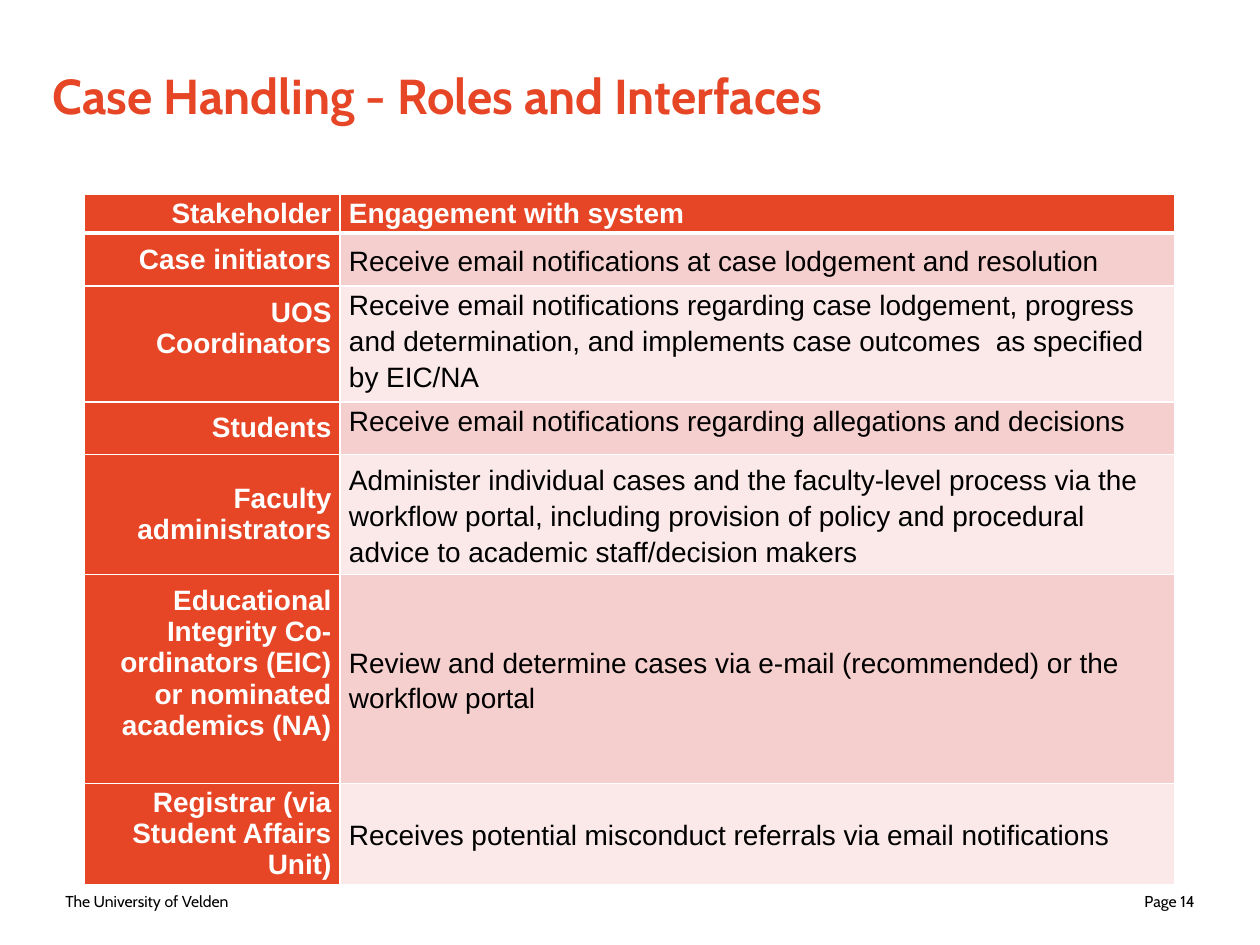
"""Build the slide on case handling roles and interfaces."""
from lxml.etree import SubElement
from pptx import Presentation
from pptx.dml.color import RGBColor
from pptx.enum.text import MSO_ANCHOR as Anchor, PP_ALIGN as Align
from pptx.oxml.ns import qn
from pptx.util import Inches, Pt

WIDTH, HEIGHT = 10, 7.5
ORANGE, WHITE, BLACK = "E64626", "FFFFFF", "000000"
BANDS = ("FAE9E8", "F5CFCD")

TITLE = {"size": Pt(28), "name": "Cabin", "bold": True, "color": ORANGE}
FOOTER = {"size": Pt(9), "name": "Cabin", "bold": False, "color": BLACK}
HEADING = {"size": Pt(16), "name": "Arial", "bold": True, "color": WHITE}
BODY = {**HEADING, "bold": False, "color": BLACK}

TEXTS = [
    ("The University of Velden", (0.42, 6.95, 2.33, 0.4), Align.LEFT, FOOTER),
    ("Page 14", (7.25, 6.95, 2.33, 0.4), Align.RIGHT, FOOTER),
    ("Case Handling - Roles and Interfaces", (0.32, 0.13, 9, 1.25), Align.LEFT, TITLE),
]

TABLE_LEFT, TABLE_TOP = 0.67, 1.54
COLUMNS = (2.03, 6.62)
SIDE_MARGIN, LIFT = 0.07, 0.25
ROWS = [
    (0.31, "Stakeholder", "Engagement with system"),
    (0.42, "Case initiators",
     "Receive email notifications at case lodgement and resolution"),
    (0.92, "UOS Coordinators",
     "Receive email notifications regarding case lodgement, progress and "
     "determination, and implements case outcomes  as specified by EIC/NA"),
    (0.42, "Students",
     "Receive email notifications regarding allegations and decisions"),
    (0.95, "Faculty administrators",
     "Administer individual cases and the faculty-level process via the workflow "
     "portal, including provision of policy and procedural advice to academic "
     "staff/decision makers"),
    (1.66, "Educational Integrity Co-ordinators (EIC) or nominated academics (NA)",
     "Review and determine cases via e-mail (recommended) or the workflow portal"),
    (0.79, "Registrar (via Student Affairs Unit)",
     "Receives potential misconduct referrals via email notifications"),
]
LIFTED_LABELS = {2, 5}
TOP_ANCHORED = {2, 3}


def color(value):
    """Turn a hex string into a colour."""
    return RGBColor.from_string(value)


def write(frame, text, align, style, spacing=None):
    """Fill the first paragraph of a text frame."""
    para = frame.paragraphs[0]
    para.alignment = align
    para.line_spacing = spacing
    span = para.add_run()
    span.text = text
    for key, value in style.items():
        if key == "color":
            span.font.color.rgb = color(value)
        else:
            setattr(span.font, key, value)


def add_text(page, text, place, align, style):
    """Add one wrapped text box, centred vertically."""
    frame = page.shapes.add_textbox(*map(Inches, place)).text_frame
    frame.word_wrap = True
    frame.vertical_anchor = Anchor.MIDDLE
    write(frame, text, align, style)


def add_borders(cell, top, bottom):
    """Draw white borders on the four sides of a cell."""
    for side, points in (("L", 1), ("R", 1), ("T", top), ("B", bottom)):
        line = SubElement(cell._tc.get_or_add_tcPr(), qn(f"a:ln{side}"), w=str(Pt(points)))
        SubElement(SubElement(line, qn("a:solidFill")), qn("a:srgbClr"), val=WHITE)


def format_cell(cell, row, column, text):
    """Style and fill one table cell according to its position."""
    is_label, is_header = column == 0, row == 0
    lifted = is_label and row in LIFTED_LABELS
    at_top = not is_label and row in TOP_ANCHORED
    layout = {
        "margin_left": Inches(SIDE_MARGIN),
        "margin_right": Inches(SIDE_MARGIN),
        "margin_top": 0,
        "margin_bottom": Inches(LIFT if lifted else 0),
        "vertical_anchor": Anchor.TOP if at_top else Anchor.MIDDLE,
    }
    for key, value in layout.items():
        setattr(cell, key, value)
    add_borders(cell, 3 if row == 1 else 1, 3 if is_header else 1)
    strong = is_label or is_header
    cell.fill.solid()
    cell.fill.fore_color.rgb = color(ORANGE if strong else BANDS[row % 2])
    write(cell.text_frame, text, Align.RIGHT if is_label else Align.LEFT,
          HEADING if strong else BODY, None if strong else 1.15)


def add_roles_table(page):
    """Add the table of stakeholders and their engagement."""
    size = (sum(COLUMNS), sum(height for height, *_ in ROWS))
    table = page.shapes.add_table(
        len(ROWS), len(COLUMNS), *map(Inches, (TABLE_LEFT, TABLE_TOP, *size))).table
    table.horz_banding = False
    for column, width in zip(table.columns, COLUMNS):
        column.width = Inches(width)
    for row, (height, *texts) in enumerate(ROWS):
        table.rows[row].height = Inches(height)
        for column, text in enumerate(texts):
            format_cell(table.cell(row, column), row, column, text)


def main():
    """Build and save the deck."""
    deck = Presentation()
    deck.slide_width, deck.slide_height = Inches(WIDTH), Inches(HEIGHT)
    page = deck.slides.add_slide(deck.slide_layouts[6])
    for item in TEXTS:
        add_text(page, *item)
    add_roles_table(page)
    deck.save("out.pptx")


if __name__ == "__main__":
    main()
